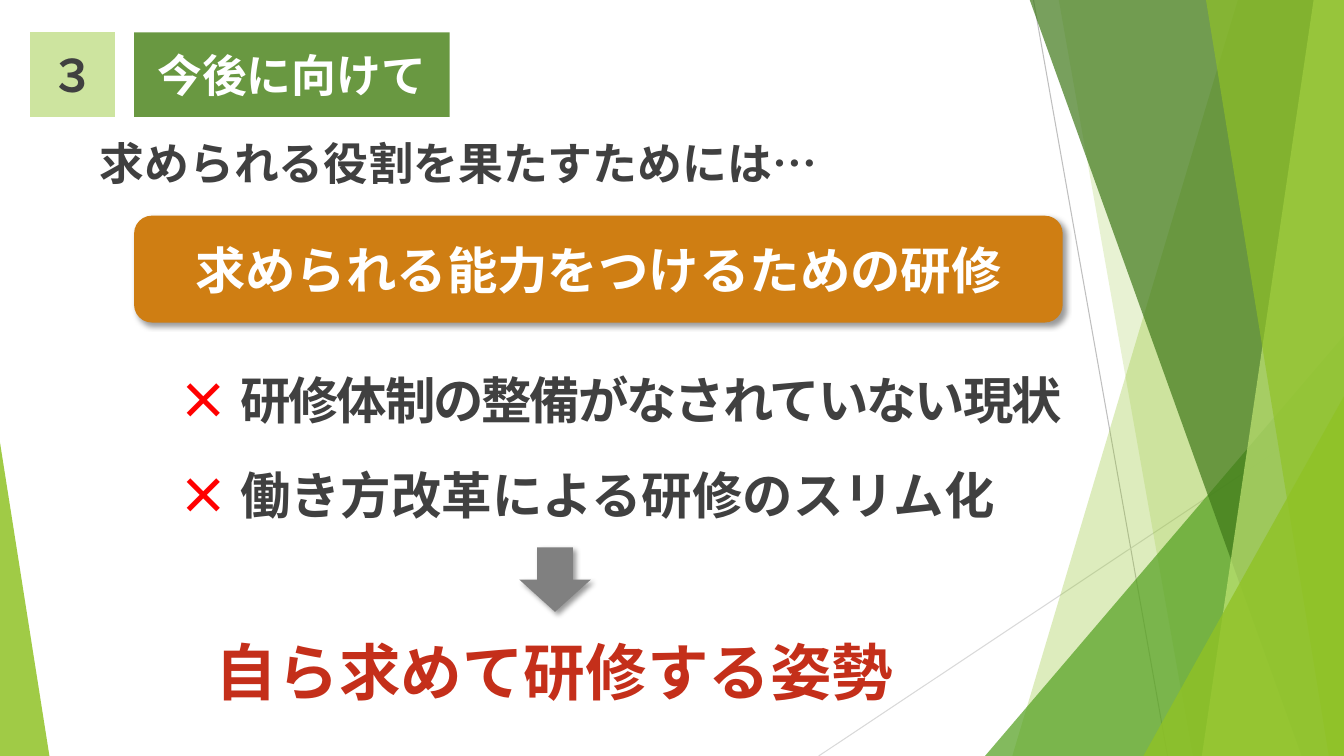
from lxml.etree import SubElement
from pptx import Presentation
from pptx.dml.color import RGBColor
from pptx.enum.shapes import MSO_CONNECTOR, MSO_SHAPE
from pptx.enum.text import MSO_ANCHOR, PP_ALIGN
from pptx.oxml import parse_xml
from pptx.oxml.ns import nsdecls, qn
from pptx.util import Inches, Pt

FONT = "Noto Sans CJK JP"
WHITE = RGBColor(0xFF, 0xFF, 0xFF)
DARK = RGBColor(0x40, 0x40, 0x40)
GRAY = RGBColor(0x80, 0x80, 0x80)
RED = RGBColor(0xFF, 0x00, 0x00)
BRICK = RGBColor(0xC4, 0x2F, 0x1A)
ORANGE = RGBColor(0xCF, 0x7E, 0x13)
TITLE_GREEN = RGBColor(0x69, 0x98, 0x41)
PALE_GREEN = RGBColor(0xCD, 0xE4, 0x9F)
LIME = RGBColor(0x90, 0xC2, 0x26)
LEAF = RGBColor(0x54, 0xA0, 0x21)
FOREST = RGBColor(0x3F, 0x78, 0x19)
MINT = RGBColor(0xC0, 0xE4, 0x74)
LINE_GRAY = RGBColor(0xBF, 0xBF, 0xBF)
LINE_LIGHT = RGBColor(0xD9, 0xD9, 0xD9)
WIDTH, HEIGHT = 13.33, 7.5
SHADOW = (
    f'<a:effectLst {nsdecls("a")}><a:outerShdw blurRad="50800" dist="38100" dir="2700000" '
    'algn="tl" rotWithShape="0"><a:srgbClr val="000000"><a:alpha val="40000"/></a:srgbClr>'
    "</a:outerShdw></a:effectLst>"
)


def paint(shape, color, opacity=100):
    shape.shadow.inherit = False
    shape.fill.solid()
    shape.fill.fore_color.rgb = color
    shape.line.fill.background()
    if opacity < 100:
        color_element = shape.fill._xPr.find(qn("a:solidFill"))[0]
        SubElement(color_element, qn("a:alpha"), val=str(opacity * 1000))


def write(shape, runs, size, align=PP_ALIGN.LEFT, anchor=MSO_ANCHOR.TOP):
    """Fill the shape's paragraph with (text, color) runs and return the runs."""
    frame = shape.text_frame
    frame.word_wrap = True
    frame.vertical_anchor = anchor
    paragraph = frame.paragraphs[0]
    paragraph.alignment = align
    for text, color in runs:
        run = paragraph.add_run()
        run.text = text
        run.font.size = Pt(size)
        run.font.bold = True
        run.font.name = FONT
        run.font.color.rgb = color
        SubElement(run.font._element, qn("a:ea"), typeface=FONT)
    return paragraph.runs


presentation = Presentation()
presentation.slide_width = Inches(WIDTH)
presentation.slide_height = Inches(HEIGHT)
slide = presentation.slides.add_slide(presentation.slide_layouts[5])
shapes = slide.shapes

# Background lines and translucent facets
for x1, y1, x2, y2, color in (
    (10.25, 0, 11.58, HEIGHT, LINE_GRAY),
    (WIDTH, 4.03, 8.12, HEIGHT, LINE_LIGHT),
):
    line = shapes.add_connector(
        MSO_CONNECTOR.STRAIGHT, Inches(x1), Inches(y1), Inches(x2), Inches(y2)
    )
    line.line.color.rgb = color
    line.line.width = Pt(0.75)
    SubElement(line._element.spPr, qn("a:effectLst"))

# Bands run to the right edge: top x, bottom x. Triangles: left, top, width, apex.
for kind, geometry, color, opacity in (
    ("band", (12.28, 10.04), LIME, 30),
    ("band", (10.5, 11.83), LIME, 20),
    ("triangle", (9.77, 3.33, 3.56, 1), LEAF, 72),
    ("band", (10.21, 12.91), FOREST, 70),
    ("band", (13.03, 11.92), MINT, 70),
    ("band", (11.96, 13.18), LIME, 65),
    ("triangle", (11.34, 3.93, 1.99, 1), LIME, 80),
    ("triangle", (0, 4.39, 0.49, 0), LIME, 85),
):
    if kind == "band":
        top_x, bottom_x = geometry
        builder = shapes.build_freeform(Inches(top_x), Inches(-0.01))
        corners = ((WIDTH, -0.01), (WIDTH, HEIGHT), (bottom_x, HEIGHT))
        builder.add_line_segments([(Inches(x), Inches(y)) for x, y in corners])
        facet = builder.convert_to_shape()
    else:
        left, top, width, apex = geometry
        facet = shapes.add_shape(
            MSO_SHAPE.ISOSCELES_TRIANGLE,
            Inches(left), Inches(top), Inches(width), Inches(HEIGHT - top),
        )
        facet.adjustments[0] = apex
    paint(facet, color, opacity)

# Section number and title
number = shapes.add_shape(
    MSO_SHAPE.RECTANGLE, Inches(0.3), Inches(0.32), Inches(0.84), Inches(0.84)
)
paint(number, PALE_GREEN)
write(number, [("３", DARK)], 32, PP_ALIGN.CENTER, MSO_ANCHOR.MIDDLE)

title = shapes.title
title.left, title.top = Inches(1.33), Inches(0.32)
title.width, title.height = Inches(3.13), Inches(0.84)
title.fill.solid()
title.fill.fore_color.rgb = TITLE_GREEN
write(title, [("今後に向けて", WHITE)], 32, PP_ALIGN.CENTER, MSO_ANCHOR.MIDDLE)

# Lead-in and main banner
lead = shapes.add_textbox(Inches(0.89), Inches(1.3), Inches(8.45), Inches(0.64))
write(lead, [("求められる役割を果たすためには…", DARK)], 32)

banner = shapes.add_shape(
    MSO_SHAPE.ROUNDED_RECTANGLE, Inches(1.33), Inches(2.14), Inches(9.21), Inches(1.06)
)
paint(banner, ORANGE)
write(banner, [("求められる能力をつけるための研修", WHITE)], 36, PP_ALIGN.CENTER, MSO_ANCHOR.MIDDLE)
banner.text_frame.paragraphs[0].space_before = Pt(10)

# Obstacles, each marked with an outlined red cross
for index, (obstacle, spacing) in enumerate((
    ("研修体制の整備がなされていない現状", -1.5),
    ("働き方改革による研修のスリム化", 0),
)):
    box = shapes.add_textbox(
        Inches(1.67), Inches(3.61 + 0.94 * index), Inches(9.42), Inches(0.71)
    )
    cross, label = write(box, [("× ", RED), (obstacle, DARK)], 36)
    cross.font._element.insert(0, parse_xml(
        f'<a:ln {nsdecls("a")} w="57150"><a:solidFill><a:srgbClr val="{RED}"/></a:solidFill></a:ln>'
    ))
    if spacing:
        label.font._element.set("spc", str(int(spacing * 100)))

# Arrow to the conclusion
arrow = shapes.add_shape(
    MSO_SHAPE.DOWN_ARROW, Inches(5.15), Inches(5.43), Inches(0.71), Inches(0.64)
)
paint(arrow, GRAY)
for shape in (banner, arrow):
    properties = shape._element.spPr
    properties.replace(properties.find(qn("a:effectLst")), parse_xml(SHADOW))

conclusion = shapes.add_textbox(Inches(1.67), Inches(6.24), Inches(7.67), Inches(0.84))
write(conclusion, [("自ら求めて研修する姿勢", BRICK)], 44, PP_ALIGN.CENTER)

presentation.save("out.pptx")
